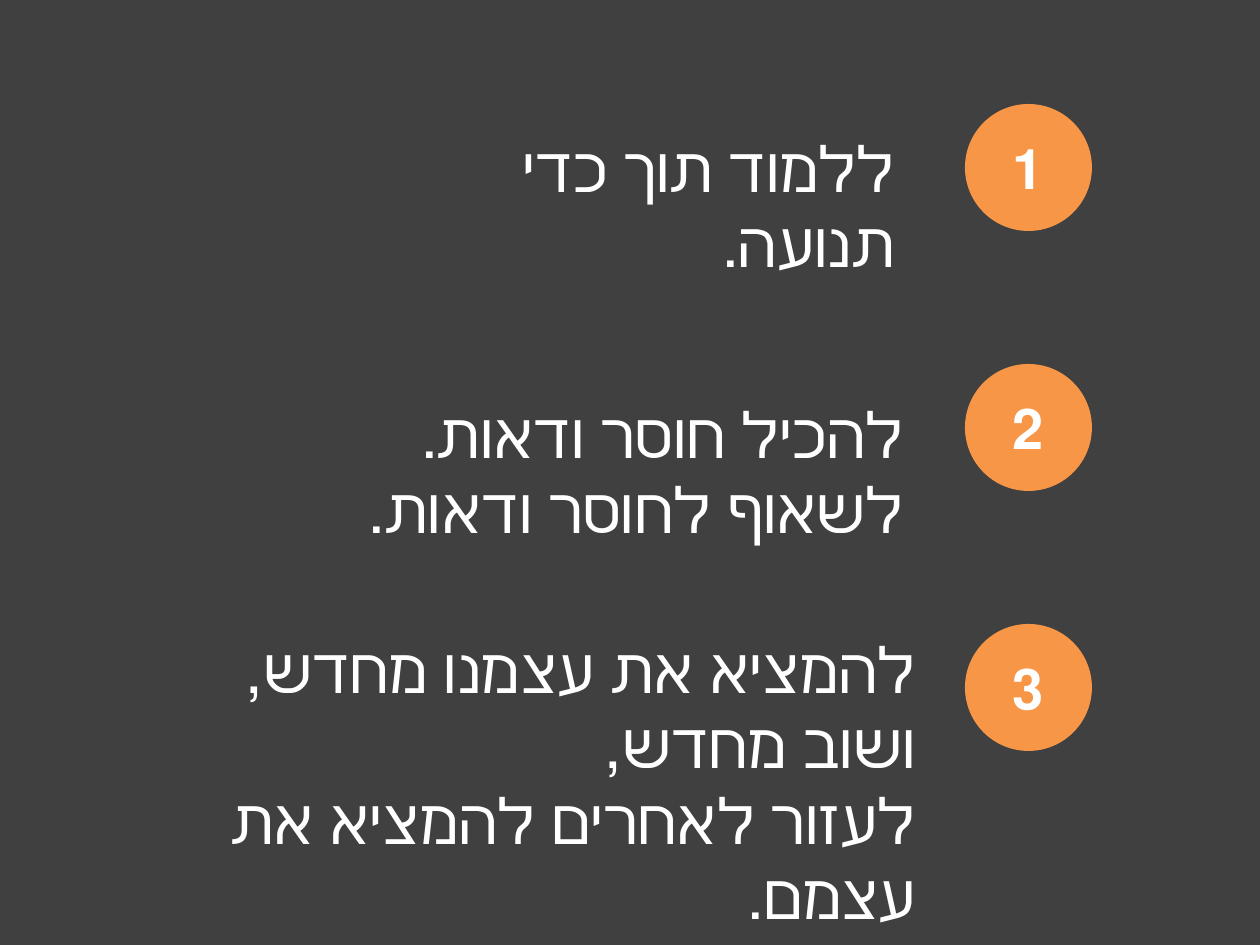
from dataclasses import dataclass

from pptx import Presentation
from pptx.dml.color import RGBColor
from pptx.enum.lang import MSO_LANGUAGE_ID as Lang
from pptx.enum.shapes import MSO_SHAPE as Shape
from pptx.enum.text import MSO_ANCHOR as Anchor, MSO_AUTO_SIZE as AutoSize, PP_ALIGN as Align
from pptx.util import Pt

EMU_PER_PX = 914400 / 126


@dataclass(frozen=True)
class Theme:
    background: RGBColor = RGBColor(0x40, 0x40, 0x40)
    accent: RGBColor = RGBColor(0xF7, 0x96, 0x46)
    text: RGBColor = RGBColor(0xFF, 0xFF, 0xFF)
    font: str = "Calibri"
    number_size: int = 32
    body_size: int = 36


def px(*lengths):
    return [round(n * EMU_PER_PX) for n in lengths]


class SlideBuilder:
    def __init__(self, s, theme):
        self.s, self.theme = s, theme
        s.background.fill.solid()
        s.background.fill.fore_color.rgb = theme.background

    def add_lines(self, p, text, size, align, bold=False):
        """Fill a right-to-left paragraph, one run per line."""
        p.alignment = align
        p._p.get_or_add_pPr().set("rtl", "1")
        for i, line in enumerate(text.split("\n")):
            if i:
                p.add_line_break()
            r = p.add_run()
            r.text = line
            r.font.name = self.theme.font
            r.font.size = Pt(size)
            r.font.bold = bold
            r.font.color.rgb = self.theme.text
            r.font.language_id = Lang.HEBREW

    def badge(self, number, x, y, size):
        sp = self.s.shapes.add_shape(Shape.OVAL, *px(x, y, size, size))
        sp.shadow.inherit = False
        sp.fill.solid()
        sp.fill.fore_color.rgb = self.theme.accent
        sp.line.fill.background()
        tf = sp.text_frame
        tf.vertical_anchor = Anchor.MIDDLE
        self.add_lines(tf.paragraphs[0], str(number), self.theme.number_size, Align.CENTER, bold=True)

    def text(self, paragraphs, box):
        tf = self.s.shapes.add_textbox(*px(*box)).text_frame
        tf.word_wrap = True
        tf.auto_size = AutoSize.SHAPE_TO_FIT_TEXT
        for i, text in enumerate(paragraphs):
            p = tf.add_paragraph() if i else tf.paragraphs[0]
            self.add_lines(p, text, self.theme.body_size, Align.RIGHT)


# Each principle: its paragraphs and its text box (left, top, width, height)
PRINCIPLES = [
    (["ללמוד תוך כדי תנועה."], (353, 123, 554, 89)),
    (["להכיל חוסר ודאות.", "לשאוף לחוסר ודאות."], (74, 389, 842, 165)),
    (["להמציא את עצמנו מחדש, \nושוב מחדש,\nלעזור לאחרים להמציא את עצמם."],
     (74, 624, 854, 242)),
]
BADGE_X, BADGE_Y, BADGE_STEP, BADGE_SIZE = 965, 104, 260, 127


def main():
    prs = Presentation()
    prs.slide_width, prs.slide_height = px(1260, 945)
    blank = prs.slide_layouts[6]
    slide = SlideBuilder(prs.slides.add_slide(blank), Theme())

    # Numbered circles down the right side
    for i in range(len(PRINCIPLES)):
        slide.badge(i + 1, BADGE_X, BADGE_Y + i * BADGE_STEP, BADGE_SIZE)

    # Principles beside them
    for paragraphs, box in PRINCIPLES:
        slide.text(paragraphs, box)

    prs.save("out.pptx")


if __name__ == "__main__":
    main()
